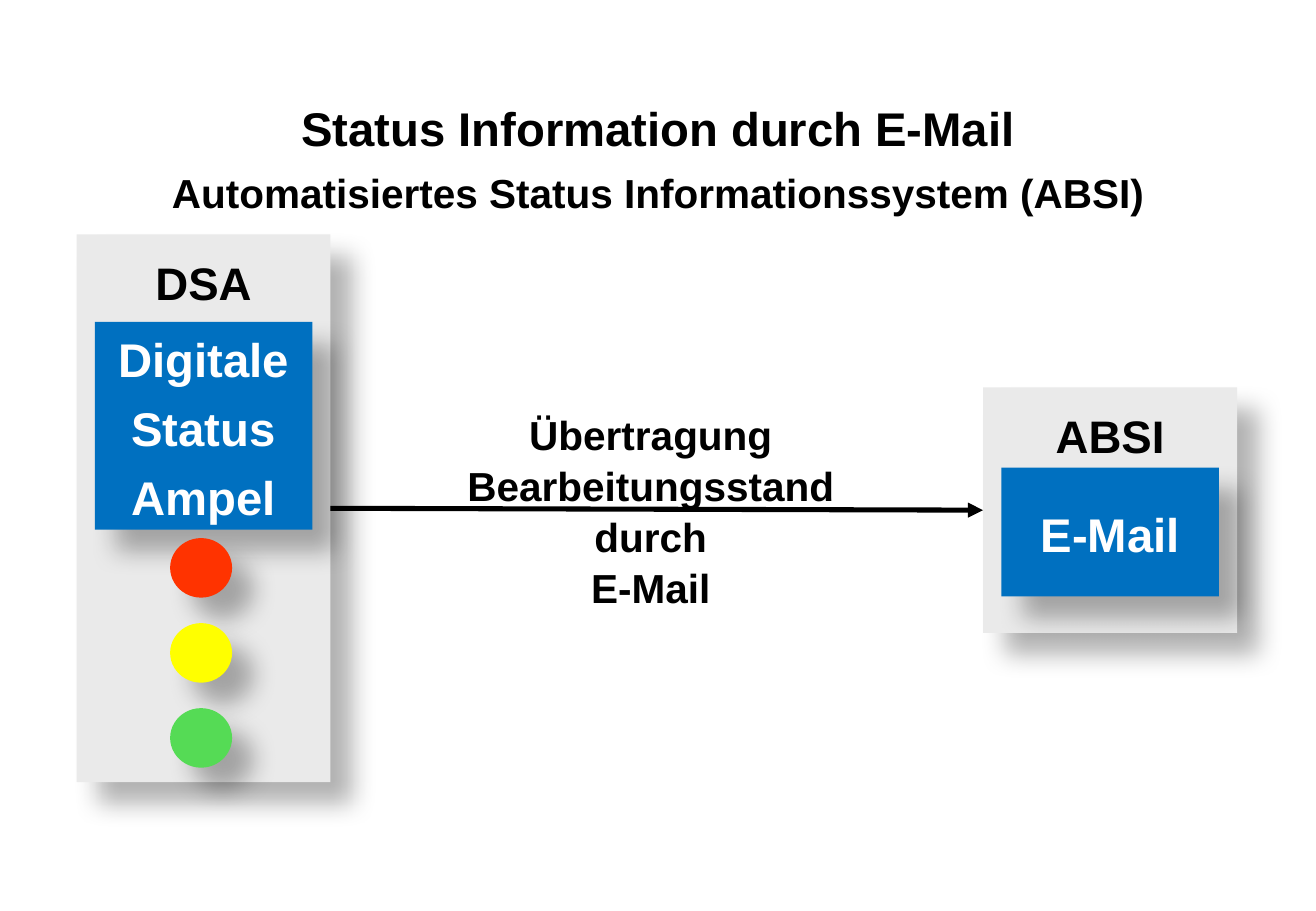
from collections import namedtuple

from lxml.etree import SubElement
from pptx import Presentation
from pptx.dml.color import RGBColor
from pptx.enum.shapes import MSO_CONNECTOR, MSO_SHAPE
from pptx.enum.text import MSO_ANCHOR, PP_ALIGN
from pptx.oxml.ns import qn
from pptx.util import Inches, Pt

BLACK = RGBColor(0x00, 0x00, 0x00)
WHITE = RGBColor(0xFF, 0xFF, 0xFF)
PANEL_GREY = RGBColor(0xEA, 0xEA, 0xEA)
BLOCK_BLUE = RGBColor(0x00, 0x70, 0xC0)
LIGHT_RED = RGBColor(0xFF, 0x33, 0x00)
LIGHT_YELLOW = RGBColor(0xFF, 0xFF, 0x00)
LIGHT_GREEN = RGBColor(0x55, 0xDB, 0x55)

CELL = Inches(0.1)  # one column or row of the slide grid
LINE_SPACING = 1.05


class Box(namedtuple("Box", "column row columns rows")):
    """An area on the slide grid."""

    def inner(self, column, row, columns, rows):
        return Box(self.column + column, self.row + row, columns, rows)

    def place(self):
        return [round(length * CELL) for length in self]


def write(shape, lines, sizes, color=BLACK, gap=0, anchor=MSO_ANCHOR.TOP):
    frame = shape.text_frame
    frame.word_wrap = False
    frame.vertical_anchor = anchor
    frame.text = "\n".join(lines)
    for index, (para, size) in enumerate(zip(frame.paragraphs, sizes)):
        para.alignment = PP_ALIGN.CENTER
        para.line_spacing = LINE_SPACING
        if index:
            para.space_before = Pt(gap)
        for span in para.runs:
            span.font.name = "Arial"
            span.font.size = Pt(size)
            span.font.bold = True
            span.font.color.rgb = color


def add_text(shapes, box, lines, sizes, **options):
    write(shapes.add_textbox(*box.place()), lines, sizes, **options)


def add_shadowed(shapes, kind, box, fill):
    shape = shapes.add_shape(kind, *box.place())
    shape.fill.solid()
    shape.fill.fore_color.rgb = fill
    shape.line.fill.background()
    shape.shadow.inherit = False
    effects = shape.element.spPr.find(qn("a:effectLst"))
    shadow = SubElement(effects, qn("a:outerShdw"), blurRad=str(Pt(15)),
                        dist=str(Pt(18)), dir=str(45 * 60000),
                        algn="tl", rotWithShape="0")
    tone = SubElement(shadow, qn("a:srgbClr"), val=str(BLACK))
    SubElement(tone, qn("a:alpha"), val="30000")
    return shape


def add_panel(shapes, box, label, lines, block_row, block_rows, anchor):
    """Grey panel with a label above a blue block."""
    panel = add_shadowed(shapes, MSO_SHAPE.RECTANGLE, box, PANEL_GREY)
    add_text(shapes, box.inner(0, 1, box.columns, 5.5), [label], [27])
    block_box = box.inner(1.5, block_row, box.columns - 3, block_rows)
    block = add_shadowed(shapes, MSO_SHAPE.RECTANGLE, block_box, BLOCK_BLUE)
    write(block, lines, [28] * len(lines), color=WHITE, gap=5.6, anchor=anchor)
    return panel


def add_traffic_lights(shapes, box):
    group = shapes.add_group_shape()
    for index, color in enumerate((LIGHT_RED, LIGHT_YELLOW, LIGHT_GREEN)):
        light = box.inner(0, 7 * index, box.columns, 4.9)
        add_shadowed(group.shapes, MSO_SHAPE.OVAL, light, color)


def add_arrow(shapes, source, target):
    """Arrow from the right side of source to the left side of target."""
    arrow = shapes.add_connector(MSO_CONNECTOR.STRAIGHT, 0, 0, 0, 0)
    arrow.begin_connect(source, 3)
    arrow.end_connect(target, 1)
    arrow.line.color.rgb = BLACK
    arrow.line.width = Pt(3)
    SubElement(arrow.line._get_or_add_ln(), qn("a:tailEnd"), type="triangle")
    SubElement(arrow.element.spPr, qn("a:effectLst"))


def build_status_slide(deck):
    page = deck.slides.add_slide(deck.slide_layouts[6])
    shapes = page.shapes

    # Heading
    add_text(shapes, Box(5.4, 8.3, 97.5, 9.2),
             ["Status Information durch E-Mail",
              "Automatisiertes Status Informationssystem (ABSI)"],
             [28, 24], gap=5.5, anchor=MSO_ANCHOR.MIDDLE)

    # Caption of the transfer
    add_text(shapes, Box(37.3, 33.1, 32.5, 17.2),
             ["Übertragung", "Bearbeitungsstand", "durch", "E-Mail"], [24] * 4)

    # Sender with its traffic lights
    sender_box = Box(6.3, 19.3, 20.9, 45.1)
    sender = add_panel(shapes, sender_box, "DSA",
                       ["Digitale", "Status", "Ampel"],
                       7.2, 17.1, MSO_ANCHOR.TOP)
    add_traffic_lights(shapes, sender_box.inner(7.7, 25, 5.1, 18.9))

    # Receiver and the arrow leading to it
    receiver = add_panel(shapes, Box(80.9, 31.9, 20.9, 20.2), "ABSI",
                         ["E-Mail"], 6.6, 10.6, MSO_ANCHOR.MIDDLE)
    add_arrow(shapes, sender, receiver)


def main():
    deck = Presentation()
    deck.slide_width = Inches(10.83)
    deck.slide_height = Inches(7.5)
    build_status_slide(deck)
    deck.save("out.pptx")


if __name__ == "__main__":
    main()
